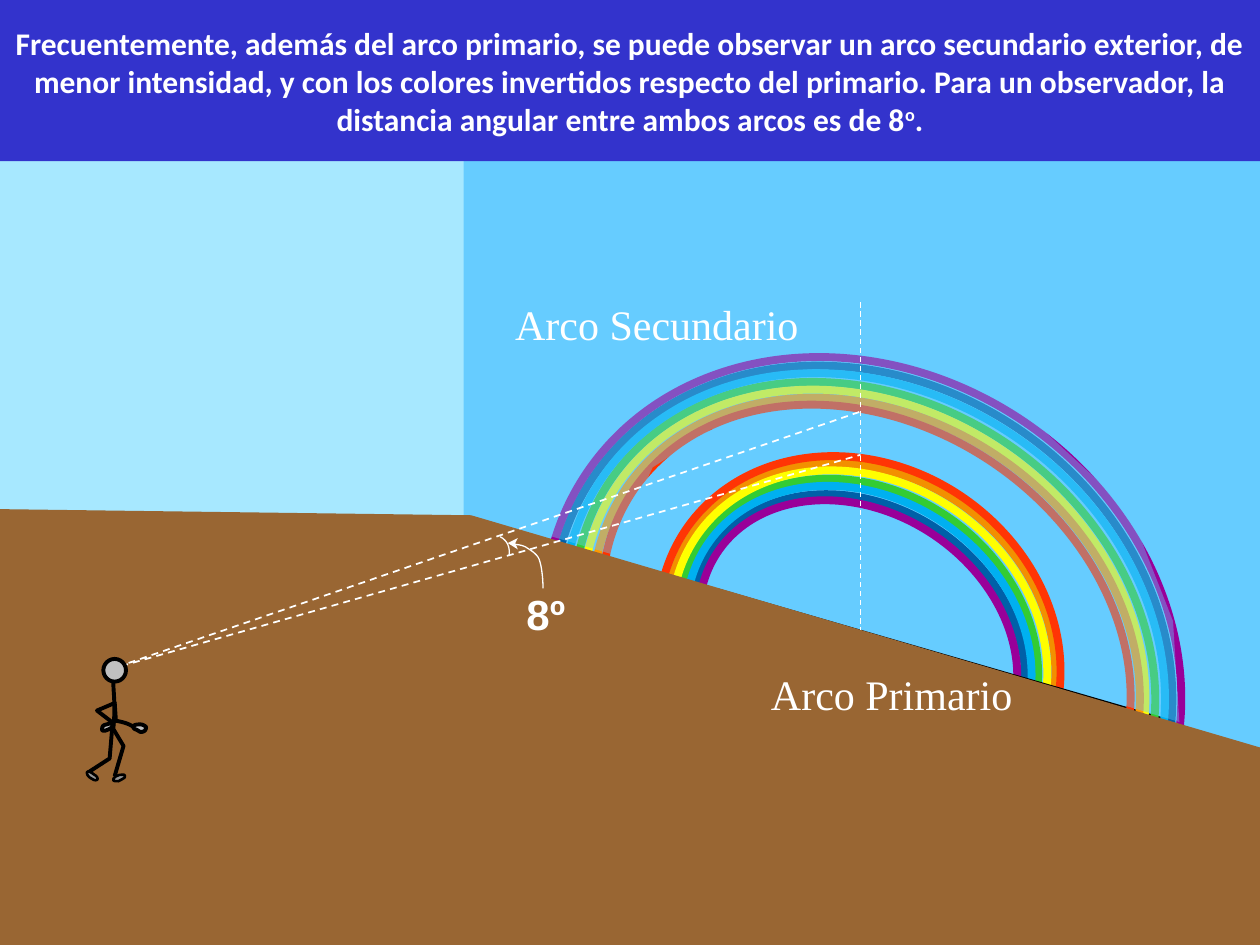
from dataclasses import dataclass
from typing import Optional

from lxml.etree import SubElement
from pptx import Presentation
from pptx.dml.color import RGBColor
from pptx.enum.dml import MSO_LINE
from pptx.enum.shapes import MSO_CONNECTOR, MSO_SHAPE
from pptx.enum.text import MSO_ANCHOR, MSO_AUTO_SIZE, PP_ALIGN
from pptx.oxml.ns import qn
from pptx.util import Inches, Pt

WHITE = RGBColor(0xFF, 0xFF, 0xFF)
BLACK = RGBColor(0, 0, 0)
BANNER = RGBColor(0x33, 0x33, 0xCC)
PALE_SKY = RGBColor(0xA7, 0xE8, 0xFF)
SKY = RGBColor(0x66, 0xCC, 0xFF)
GROUND = RGBColor(0x99, 0x66, 0x33)
HEAD_GRAY = RGBColor(0xC0, 0xC0, 0xC0)
SHOE_GRAY = RGBColor(0x96, 0x96, 0x96)
VIOLET = RGBColor(0x99, 0x00, 0x99)
INDIGO = RGBColor(0x00, 0x60, 0xA8)
BLUE = RGBColor(0x00, 0xB0, 0xF0)
GREEN = RGBColor(0x33, 0xCC, 0x33)
YELLOW = RGBColor(0xFF, 0xFF, 0x00)
ORANGE = RGBColor(0xF2, 0x90, 0x00)
RED = RGBColor(0xFF, 0x35, 0x05)
DEEP_ORANGE = RGBColor(0xFF, 0x99, 0x00)
DEEP_RED = RGBColor(0xFF, 0x33, 0x00)

Point = tuple[float, float]
ARC_TILT = 33.3
CURVE_STEPS = 8


@dataclass(frozen=True)
class Pen:
    color: RGBColor
    width: float
    dashed: bool = False


@dataclass(frozen=True)
class Band:
    left: float
    top: float
    width: float
    height: float
    color: RGBColor


@dataclass(frozen=True)
class Label:
    text: str
    left: float
    top: float
    width: float
    font: str
    bold: bool = False


@dataclass(frozen=True)
class Limb:
    points: list[Point]
    fill: Optional[RGBColor] = None
    width: float = 2.25


PRIMARY_ARC = [
    Band(5.22, 3.75, 3.22, 2.77, ORANGE),
    Band(5.31, 3.88, 3, 2.5, GREEN),
    Band(5.42, 4.01, 2.79, 2.25, INDIGO),
    Band(5.37, 3.94, 2.89, 2.37, BLUE),
    Band(5.26, 3.81, 3.12, 2.64, YELLOW),
    Band(5.47, 4.06, 2.68, 2.13, VIOLET),
    Band(5.16, 3.69, 3.32, 2.88, RED),
]
SECONDARY_ARC = [
    Band(4.27, 3.02, 5.14, 4.4, INDIGO),
    Band(4.43, 3.17, 4.86, 4, GREEN),
    Band(4.5, 3.23, 4.71, 3.86, YELLOW),
    Band(4.35, 3.09, 5.01, 4.21, BLUE),
    Band(4.58, 3.3, 4.59, 3.71, DEEP_ORANGE),
    Band(4.65, 3.36, 4.45, 3.54, DEEP_RED),
    Band(4.21, 2.95, 5.27, 4.54, VIOLET),
]
LABELS = [
    Label("8º", 4.08, 4.62, 0.82, "Arial", True),
    Label("Arco Primario", 6.02, 5.26, 2.42, "Times New Roman"),
    Label("Arco Secundario", 3.99, 2.32, 2.59, "Times New Roman"),
]


def curve(points: list[Point]) -> list[Point]:
    traced = [points[0]]
    for i in range(0, len(points) - 1, 3):
        a, b, c, d = points[i:i + 4]
        for step in range(1, CURVE_STEPS + 1):
            t = step / CURVE_STEPS
            u = 1 - t
            traced.append(tuple(
                u**3 * a[k] + 3 * u * u * t * b[k] + 3 * u * t * t * c[k] + t**3 * d[k]
                for k in (0, 1)))
    return traced


def style(shape, fill: Optional[RGBColor] = None, pen: Optional[Pen] = None) -> None:
    shape.shadow.inherit = False
    if fill is None:
        shape.fill.background()
    else:
        shape.fill.solid()
        shape.fill.fore_color.rgb = fill
    if pen is None:
        shape.line.fill.background()
    else:
        draw_pen(shape.line, pen)


def draw_pen(line, pen: Pen) -> None:
    line.color.rgb = pen.color
    line.width = Pt(pen.width)
    if pen.dashed:
        line.dash_style = MSO_LINE.DASH


def add_outline(shapes, points: list[Point], fill: Optional[RGBColor] = None,
                pen: Optional[Pen] = None):
    vertices = [(Inches(x), Inches(y)) for x, y in points]
    builder = shapes.build_freeform(*vertices[0])
    builder.add_line_segments(vertices[1:], close=fill is not None)
    outline = builder.convert_to_shape()
    style(outline, fill, pen)
    return outline


def add_line(shapes, start: Point, end: Point, pen: Pen) -> None:
    line = shapes.add_connector(
        MSO_CONNECTOR.STRAIGHT, *(Inches(v) for v in (*start, *end)))
    draw_pen(line.line, pen)
    SubElement(line._element.spPr, qn("a:effectLst"))


def add_ellipse(shapes, left: float, top: float, width: float, height: float):
    return shapes.add_shape(
        MSO_SHAPE.OVAL, Inches(left), Inches(top), Inches(width), Inches(height))


def add_arc(shapes, bands: list[Band]) -> None:
    for band in bands:
        ring = add_ellipse(shapes, band.left, band.top, band.width, band.height)
        ring.rotation = ARC_TILT
        style(ring, pen=Pen(band.color, 4.5))


def add_label(shapes, label: Label) -> None:
    box = shapes.add_textbox(
        Inches(label.left), Inches(label.top), Inches(label.width), Inches(0.5))
    box.text_frame.word_wrap = True
    paragraph = box.text_frame.paragraphs[0]
    paragraph.text = label.text
    paragraph.font.name = label.font
    paragraph.font.size = Pt(24)
    paragraph.font.bold = label.bold
    paragraph.font.color.rgb = WHITE


def add_observer(shapes) -> None:
    near_hand = curve([
        (0.9, 5.75), (0.9, 5.74), (0.88, 5.74), (0.87, 5.74), (0.86, 5.75), (0.83, 5.75),
        (0.82, 5.76), (0.81, 5.77), (0.81, 5.79), (0.81, 5.79), (0.81, 5.8), (0.82, 5.8),
        (0.83, 5.8), (0.84, 5.8), (0.86, 5.79), (0.88, 5.78), (0.89, 5.77), (0.9, 5.75),
        (0.9, 5.75)])
    far_hand = curve([
        (1.06, 5.77), (1.06, 5.78), (1.07, 5.79), (1.08, 5.79), (1.1, 5.8), (1.11, 5.81),
        (1.12, 5.81), (1.14, 5.81), (1.16, 5.8), (1.16, 5.77), (1.15, 5.76), (1.13, 5.75),
        (1.12, 5.75), (1.09, 5.75), (1.06, 5.75), (1.06, 5.77)])
    back_foot = curve([
        (0.69, 6.13), (0.7, 6.12), (0.71, 6.12), (0.75, 6.15), (0.77, 6.16), (0.78, 6.18),
        (0.77, 6.19), (0.75, 6.2), (0.73, 6.18), (0.71, 6.17), (0.7, 6.16), (0.69, 6.15),
        (0.69, 6.13)])
    front_foot = curve([
        (0.9, 6.19), (0.9, 6.17), (0.92, 6.16), (0.95, 6.15), (0.97, 6.15), (1, 6.14),
        (0.99, 6.17), (0.98, 6.18), (0.96, 6.19), (0.94, 6.2), (0.92, 6.2), (0.9, 6.2),
        (0.9, 6.19)])
    limbs = [
        Limb(curve([(0.9, 5.42), (0.9, 5.5), (0.92, 5.6), (0.9, 5.78)])),
        Limb([(0.91, 5.58), (0.77, 5.64), (0.9, 5.74)]),
        Limb(near_hand, HEAD_GRAY),
        Limb(curve([(0.92, 5.72), (0.97, 5.73), (1.02, 5.74), (1.06, 5.77)])),
        Limb(far_hand, HEAD_GRAY),
        Limb([(0.89, 5.78), (0.87, 6.02), (0.7, 6.13)]),
        Limb(back_foot, SHOE_GRAY, 1.5),
        Limb([(0.89, 5.77), (0.98, 5.92), (0.91, 6.16)]),
        Limb(front_foot, SHOE_GRAY, 1.5),
    ]
    for limb in limbs:
        add_outline(shapes, limb.points, limb.fill, Pen(BLACK, limb.width))
    add_line(shapes, (0.91, 5.57), (0.92, 5.72), Pen(BLACK, 2.25))
    style(add_ellipse(shapes, 0.82, 5.23, 0.18, 0.18), HEAD_GRAY, Pen(BLACK, 2.25))


def add_angle_mark(shapes) -> None:
    pen = Pen(WHITE, 0.75)
    add_outline(shapes, curve([(3.97, 4.26), (4.03, 4.29), (4.05, 4.35), (4.04, 4.41)]), pen=pen)
    add_outline(shapes, curve([
        (4.06, 4.32), (4.08, 4.32), (4.13, 4.32), (4.17, 4.34), (4.2, 4.36), (4.26, 4.39),
        (4.28, 4.44), (4.3, 4.5), (4.31, 4.59), (4.31, 4.67)]), pen=pen)
    add_outline(shapes, [(4.11, 4.36), (4.03, 4.31), (4.11, 4.27), (4.09, 4.31)], WHITE)


def fill_banner(title) -> None:
    title.left, title.top, title.width, title.height = 0, 0, Inches(10), Inches(1.28)
    title.fill.solid()
    title.fill.fore_color.rgb = BANNER
    frame = title.text_frame
    frame.word_wrap = True
    frame.auto_size = MSO_AUTO_SIZE.NONE
    frame.vertical_anchor = MSO_ANCHOR.MIDDLE
    paragraph = frame.paragraphs[0]
    paragraph.alignment = PP_ALIGN.CENTER
    paragraph.font.name = "Calibri"
    paragraph.font.size = Pt(18)
    paragraph.font.bold = True
    paragraph.font.color.rgb = WHITE
    paragraph.add_run().text = (
        "Frecuentemente, además del arco primario, se puede observar un arco secundario "
        "exterior, de menor intensidad, y con los colores invertidos respecto del primario. "
        "Para un observador, la distancia angular entre ambos arcos es de 8")
    degree = paragraph.add_run()
    degree.text = "o"
    degree.font._element.set("baseline", "30000")
    paragraph.add_run().text = "."


def main() -> None:
    deck = Presentation()
    deck.slide_width, deck.slide_height = Inches(10), Inches(7.5)
    slide = deck.slides.add_slide(deck.slide_layouts[5])
    slide.background.fill.solid()
    slide.background.fill.fore_color.rgb = PALE_SKY
    shapes = slide.shapes

    add_outline(shapes, [(10, 5.99), (3.68, 4.1), (3.68, 1.16), (10, 1.26)], SKY)
    add_arc(shapes.add_group_shape().shapes, PRIMARY_ARC)
    add_outline(shapes, [(5.7, 4.67), (5.7, 7.08), (9.32, 8.28), (9.32, 5.72)], BLACK)
    add_arc(shapes, SECONDARY_ARC)
    add_outline(
        shapes, [(10.06, 5.95), (3.74, 4.09), (-0.07, 4.04), (-0.09, 7.7), (10.07, 7.65)], GROUND)
    veil = add_outline(shapes, [
        (4.08, 4.17), (4.86, 4.4), (5.18, 3.71), (5.64, 3.41), (6.26, 3.27), (6.92, 3.32),
        (7.45, 3.5), (7.86, 3.75), (8.36, 4.24), (8.7, 4.84), (8.83, 5.23), (8.86, 5.58),
        (9.36, 5.73), (9.31, 4.93), (8.96, 4.04), (7.95, 3.11), (7.01, 2.79), (6.06, 2.75),
        (5.02, 3.08), (4.6, 3.55)], SKY)
    veil_color = veil._element.spPr.find(qn("a:solidFill"))[0]
    SubElement(veil_color, qn("a:alpha"), val="40000")
    add_line(shapes, (6.83, 2.4), (6.83, 5), Pen(WHITE, 0.75, True))
    add_outline(shapes, [(6.82, 3.27), (0.88, 5.31), (6.83, 3.61)], pen=Pen(WHITE, 1, True))
    add_observer(shapes.add_group_shape().shapes)
    add_angle_mark(shapes.add_group_shape().shapes)
    for label in LABELS:
        add_label(shapes, label)
    fill_banner(shapes.title)
    shapes._spTree.append(shapes.title._element)
    deck.save("out.pptx")


if __name__ == "__main__":
    main()
